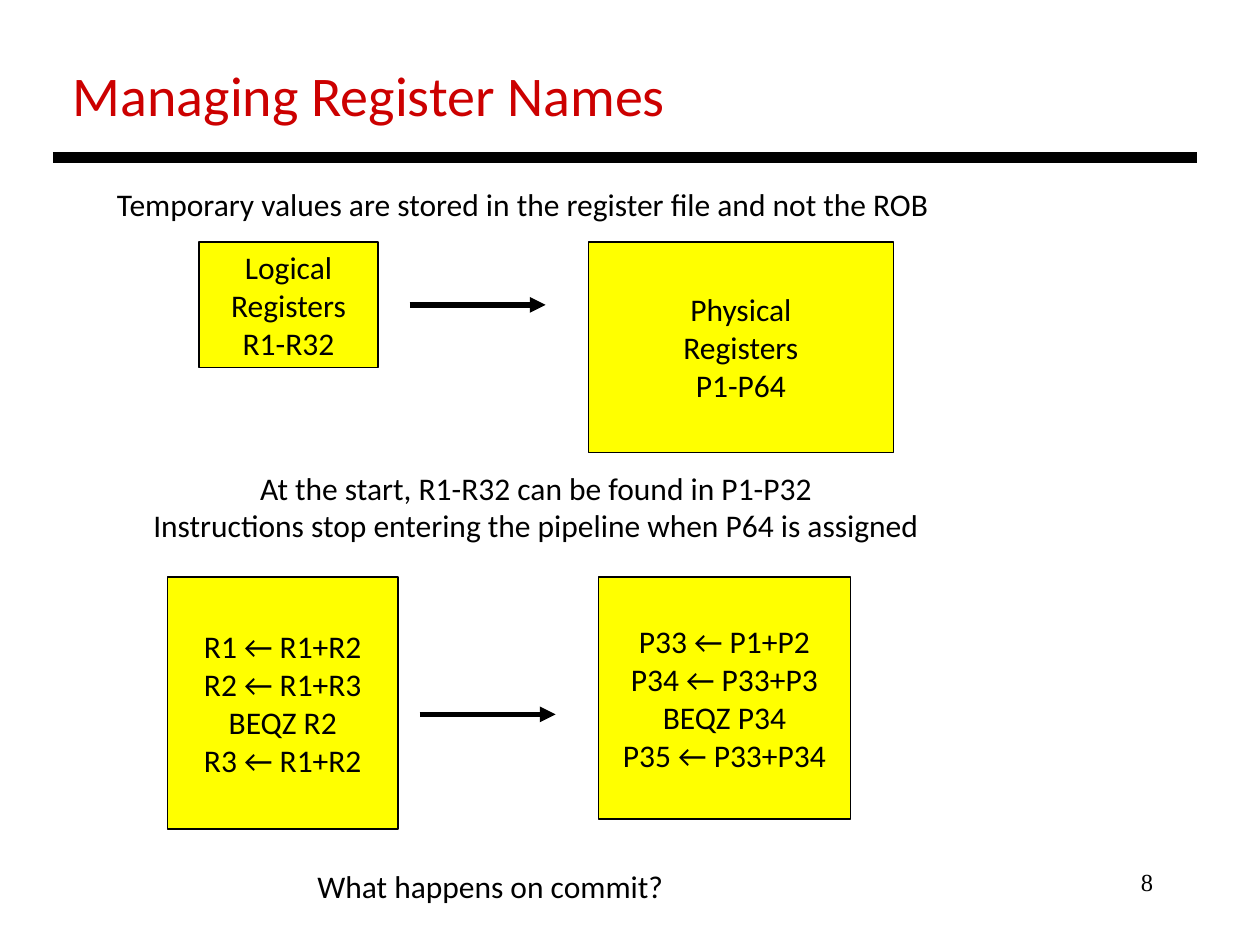
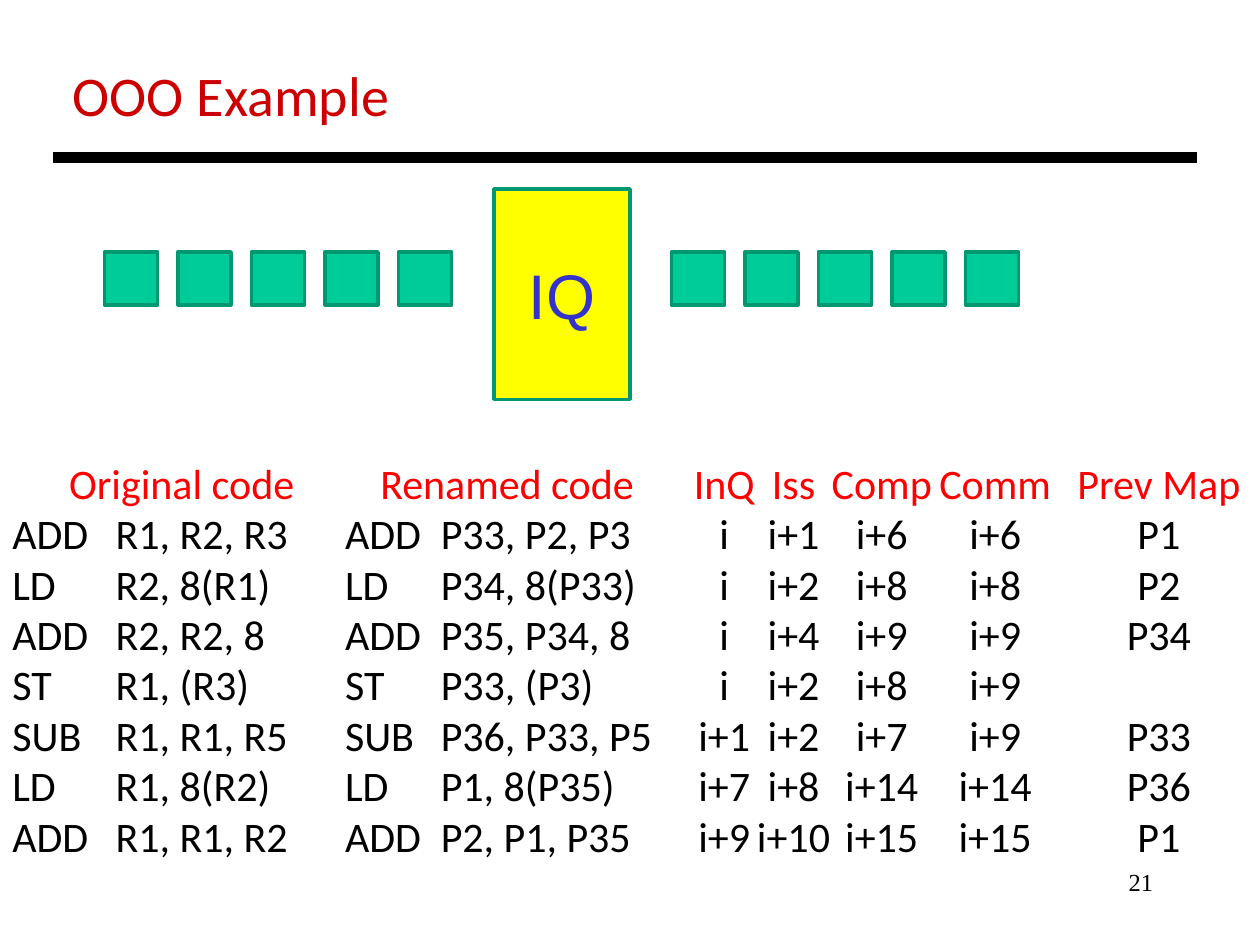
from dataclasses import dataclass

import pptx
import pptx.dml.color
import pptx.enum.shapes
import pptx.enum.text
import pptx.oxml.ns
import pptx.oxml.xmlchemy
import pptx.util
from pptx.util import Inches

RGBColor = pptx.dml.color.RGBColor
BLACK = RGBColor(0x00, 0x00, 0x00)
TITLE_RED = RGBColor(0xCC, 0x00, 0x00)
HEADER_RED = RGBColor(0xFF, 0x00, 0x00)
YELLOW = RGBColor(0xFF, 0xFF, 0x00)
GREEN = RGBColor(0x00, 0xCC, 0x99)
DARK_GREEN = RGBColor(0x00, 0x97, 0x71)
BLUE = RGBColor(0x33, 0x33, 0xCC)

ALIGN = pptx.enum.text.PP_ALIGN
LEFT, CENTER, RIGHT = ALIGN.LEFT, ALIGN.CENTER, ALIGN.RIGHT


@dataclass(frozen=True)
class TextStyle:
    size: float
    font: str = "Calibri"
    color: RGBColor = BLACK
    align: ALIGN = LEFT


@dataclass(frozen=True)
class Box:
    """A rectangle or text area, in inches, with its lines of text."""
    left: float
    top: float
    width: float
    height: float
    lines: tuple[str, ...] = ()


TITLE = TextStyle(32, color=TITLE_RED)
PAGE_NUMBER = TextStyle(14, "Times New Roman", align=RIGHT)
NOTE = TextStyle(18)
CENTERED = TextStyle(18, align=CENTER)
QUEUE = TextStyle(36, "Arial", BLUE, CENTER)
CODE = TextStyle(24)
CODE_HEADER = TextStyle(24, color=HEADER_RED)

REGISTER_BOXES = (
    Box(1.58, 1.92, 1.42, 1, ("Logical", "Registers", "R1-R32")),
    Box(4.67, 1.92, 2.42, 1.67, ("Physical", "Registers", "P1-P64")),
    Box(1.33, 4.58, 1.83, 2,
        ("R1 ← R1+R2", "R2 ← R1+R3", "BEQZ R2", "R3 ← R1+R2")),
    Box(4.75, 4.58, 2, 1.92,
        ("P33 ← P1+P2", "P34 ← P33+P3", "BEQZ P34", "P35 ← P33+P34")),
)
ARROW_STARTS = ((3.25, 2.42), (3.33, 5.67))
ARROW_LENGTH = 1.08
NOTES = (
    (Box(0.83, 1.42, 6.72, 0.4,
         ("Temporary values are stored in the register file and not the ROB",)), NOTE),
    (Box(1.08, 3.67, 6.35, 0.71,
         ("At the start, R1-R32 can be found in P1-P32",
          "Instructions stop entering the pipeline when P64 is assigned")), CENTERED),
    (Box(2.42, 6.83, 2.98, 0.4, ("What happens on commit?",)), NOTE),
)

STAGE_GROUPS = (0.83, 5.33)
STAGES_PER_GROUP = 5
STAGE_PITCH = 7 / 12
STAGE_SIZE = 0.42

# Tab positions in inches from the start of the text.
TIMING_TABS = ((5.65, "ctr"), (6.2, "ctr"), (6.9, "ctr"), (7.8, "ctr"), (9.1, "ctr"))
HEADER_TABS = ((0.45, "l"), (2.92, "l")) + TIMING_TABS
CODE_TABS = ((0.82, "l"), (2.64, "l"), (3.4, "l")) + TIMING_TABS
CODE_COLUMNS = ("", "Original code", "Renamed code",
                "InQ", "Iss", "Comp", "Comm", "Prev Map")
CODE_ROWS = (
    ("ADD", "R1, R2, R3", "ADD", "P33, P2, P3", "i", "i+1", "i+6", "i+6", "P1"),
    ("LD", "R2, 8(R1)", "LD", "P34, 8(P33)", "i", "i+2", "i+8", "i+8", "P2"),
    ("ADD", "R2, R2, 8", "ADD", "P35, P34, 8", "i", "i+4", "i+9", "i+9", "P34"),
    ("ST", "R1, (R3)", "ST", "P33, (P3)", "i", "i+2", "i+8", "i+9"),
    ("SUB", "R1, R1, R5", "SUB", "P36, P33, P5", "i+1", "i+2", "i+7", "i+9", "P33"),
    ("LD", "R1, 8(R2)", "LD", "P1, 8(P35)", "i+7", "i+8", "i+14", "i+14", "P36"),
    ("ADD", "R1, R1, R2", "ADD", "P2, P1, P35", "i+9", "i+10", "i+15", "i+15", "P1"),
)


def style_paragraph(p, style: TextStyle) -> None:
    p.alignment = style.align
    p.font.size = pptx.util.Pt(style.size)
    p.font.name = style.font
    p.font.color.rgb = style.color


def write_lines(tf, lines: tuple[str, ...], style: TextStyle) -> None:
    for i, line in enumerate(lines):
        p = tf.paragraphs[0] if i == 0 else tf.add_paragraph()
        p.add_run().text = line
        style_paragraph(p, style)


def place(box: Box) -> tuple:
    return tuple(Inches(v) for v in (box.left, box.top, box.width, box.height))


def add_text(slide, box: Box, style: TextStyle, wrap: bool = False):
    tf = slide.shapes.add_textbox(*place(box)).text_frame
    tf.word_wrap = wrap
    write_lines(tf, box.lines, style)
    return tf


def add_rect(slide, box: Box, fill: RGBColor, line: RGBColor, line_width: float,
             style: TextStyle = CENTERED) -> None:
    sp = slide.shapes.add_shape(pptx.enum.shapes.MSO_SHAPE.RECTANGLE, *place(box))
    sp.shadow.inherit = False
    sp.fill.solid()
    sp.fill.fore_color.rgb = fill
    sp.line.color.rgb = line
    sp.line.width = pptx.util.Pt(line_width)
    tf = sp.text_frame
    tf.vertical_anchor = pptx.enum.text.MSO_ANCHOR.MIDDLE
    tf.word_wrap = False
    write_lines(tf, box.lines, style)


def add_horizontal_line(slide, left: float, top: float, length: float,
                        width: float, arrow: bool = False) -> None:
    line = slide.shapes.add_connector(
        pptx.enum.shapes.MSO_CONNECTOR.STRAIGHT,
        Inches(left), Inches(top), Inches(left + length), Inches(top))
    line.line.color.rgb = BLACK
    line.line.width = pptx.util.Pt(width)
    sp_pr = line._element.spPr
    sp_pr.append(pptx.oxml.xmlchemy.OxmlElement("a:effectLst"))
    if arrow:
        tail = pptx.oxml.xmlchemy.OxmlElement("a:tailEnd")
        tail.set("type", "triangle")
        sp_pr.find(pptx.oxml.ns.qn("a:ln")).append(tail)


def set_tabs(p, tabs: tuple[tuple[float, str], ...]) -> None:
    tab_list = pptx.oxml.xmlchemy.OxmlElement("a:tabLst")
    for position, align in tabs:
        tab = pptx.oxml.xmlchemy.OxmlElement("a:tab")
        tab.set("pos", str(int(Inches(position))))
        tab.set("algn", align)
        tab_list.append(tab)
    p._p.get_or_add_pPr().insert(0, tab_list)


def add_base_slide(prs, title: str, title_width: float, number: int):
    """Add a slide with the shared title, rule and page number."""
    slide = prs.slides.add_slide(prs.slide_layouts[6])
    add_text(slide, Box(7.17, 6.83, 2.08, 0.5, (str(number),)), PAGE_NUMBER, wrap=True)
    add_text(slide, Box(0.48, 0.43, title_width, 0.64, (title,)), TITLE)
    add_horizontal_line(slide, 0.42, 1.25, 9.08, 6)
    return slide


def build_register_slide(prs) -> None:
    slide = add_base_slide(prs, "Managing Register Names", 4.95, 8)
    for box in REGISTER_BOXES:
        add_rect(slide, box, YELLOW, BLACK, 0.75)
    for left, top in ARROW_STARTS:
        add_horizontal_line(slide, left, top, ARROW_LENGTH, 3, arrow=True)
    for box, style in NOTES:
        add_text(slide, box, style)


def build_example_slide(prs) -> None:
    slide = add_base_slide(prs, "OOO Example", 2.74, 21)
    for start in STAGE_GROUPS:
        for i in range(STAGES_PER_GROUP):
            stage = Box(start + i * STAGE_PITCH, 2, STAGE_SIZE, STAGE_SIZE)
            add_rect(slide, stage, GREEN, DARK_GREEN, 2)

    lines = tuple("\t".join(row) for row in (CODE_COLUMNS,) + CODE_ROWS)
    tf = add_text(slide, Box(0, 3.58, 10.06, 3.33, lines), CODE, wrap=True)
    header, *rows = tf.paragraphs
    style_paragraph(header, CODE_HEADER)
    set_tabs(header, HEADER_TABS)
    for p in rows:
        set_tabs(p, CODE_TABS)

    add_rect(slide, Box(3.92, 1.5, 1.08, 1.67, ("IQ",)), YELLOW, DARK_GREEN, 2, QUEUE)


def main() -> None:
    prs = pptx.Presentation()
    prs.slide_width = Inches(10)
    prs.slide_height = Inches(7.5)
    build_register_slide(prs)
    build_example_slide(prs)
    prs.save("out.pptx")


if __name__ == "__main__":
    main()
